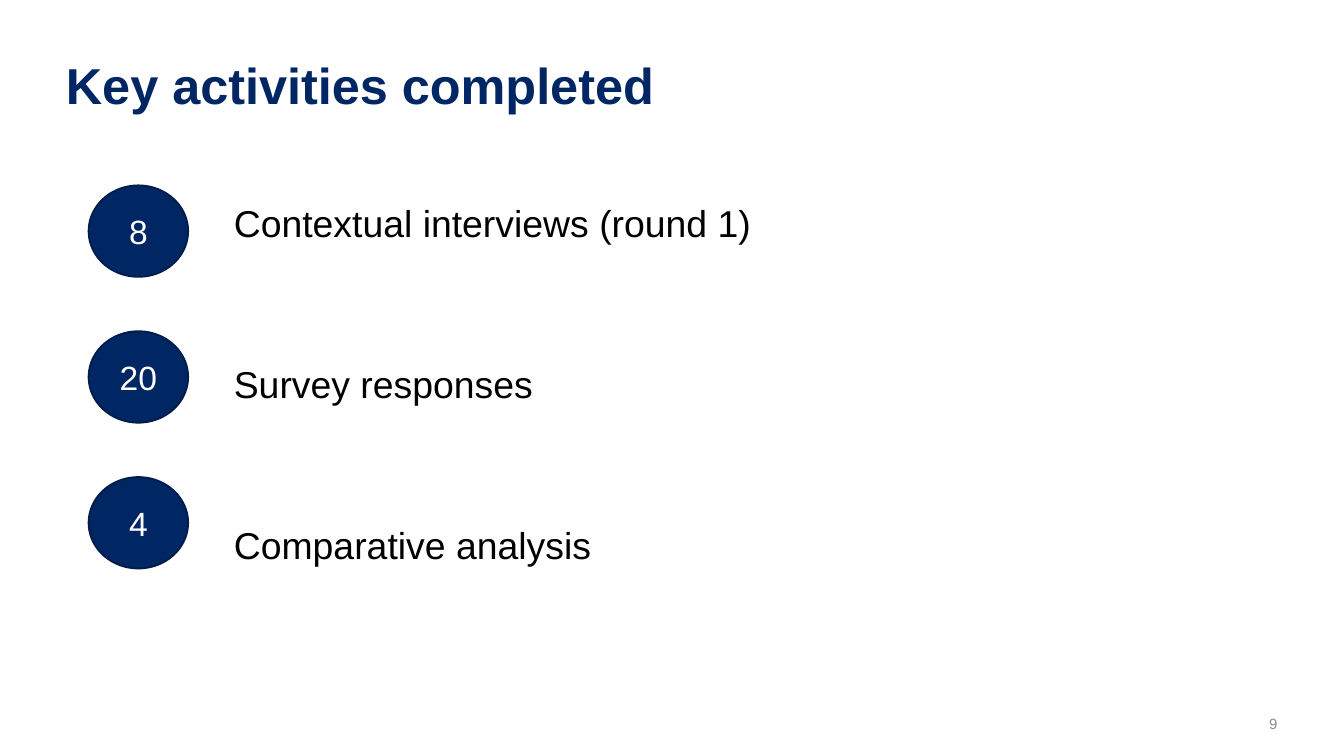
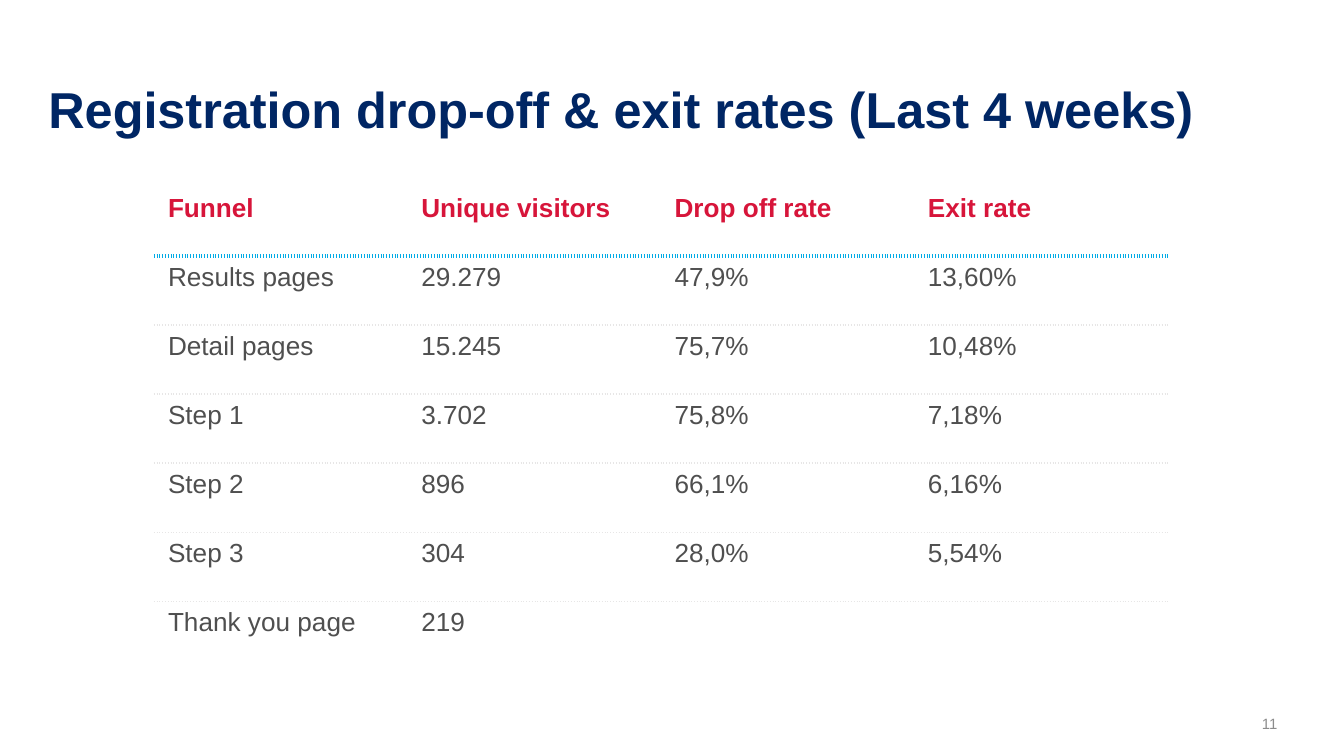
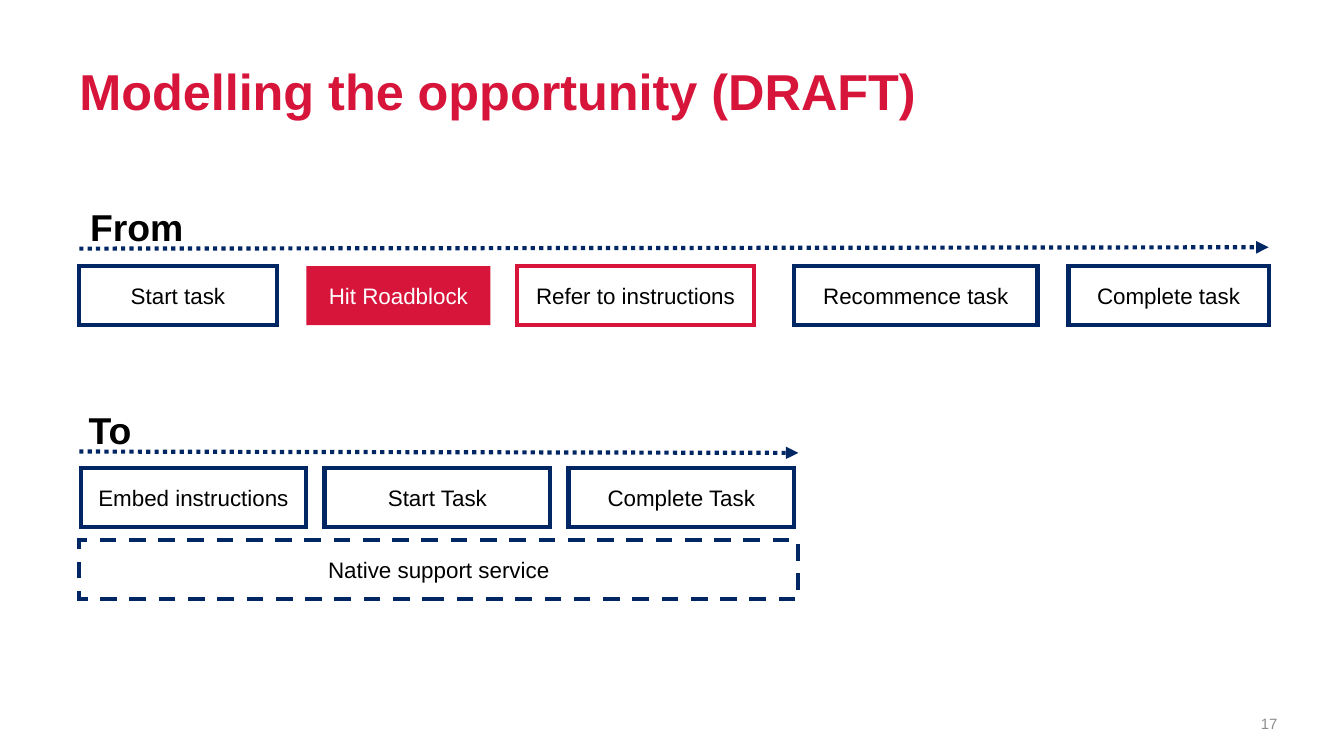
"""Build three research slides: activities, drop-off table and task model."""
from dataclasses import dataclass
from typing import Optional

from lxml import etree
from pptx import Presentation
from pptx import util as u
from pptx.dml.color import RGBColor
from pptx.enum import dml, shapes, text
from pptx.oxml import ns

NAVY = RGBColor(0x00, 0x26, 0x64)
DEEP_NAVY = RGBColor(0x00, 0x1C, 0x4A)
RED = RGBColor(0xD7, 0x15, 0x3A)
BLUE = RGBColor(0x00, 0xAB, 0xE6)
BLACK = RGBColor(0x00, 0x00, 0x00)
WHITE = RGBColor(0xFF, 0xFF, 0xFF)
GREY = RGBColor(0x8C, 0x8C, 0x8C)
DARK_GREY = RGBColor(0x4F, 0x4F, 0x4F)
PALE_GREY = RGBColor(0xE7, 0xE6, 0xE6)

FONT = "Arial"
WIDTH = u.Inches(10)
HEIGHT = u.Emu(WIDTH * 9 // 16)
COLUMN, ROW = WIDTH / 100, HEIGHT / 56.25
TITLE_ONLY = 5
LINE_SPACING = 1.2
DOTTED = dml.MSO_LINE.ROUND_DOT
OVAL = shapes.MSO_SHAPE.OVAL
RECTANGLE = shapes.MSO_SHAPE.RECTANGLE


@dataclass(frozen=True)
class Area:
    """A rectangle in grid columns and rows."""
    left: float
    top: float
    width: float
    height: float

    def lengths(self) -> tuple:
        """Return left, top, width and height as slide lengths."""
        return (u.Emu(round(self.left * COLUMN)), u.Emu(round(self.top * ROW)),
                u.Emu(round(self.width * COLUMN)), u.Emu(round(self.height * ROW)))


@dataclass(frozen=True)
class Style:
    """The look of a filled shape and its label."""
    fill: RGBColor = WHITE
    line: Optional[RGBColor] = NAVY
    line_width: float = 2.25
    dash: Optional[dml.MSO_LINE] = None
    color: RGBColor = BLACK
    size: float = 12


@dataclass(frozen=True)
class Step:
    """One step of a task flow, placed by its columns."""
    label: str
    left: float
    width: float
    style: Style = Style()


BADGE = Style(NAVY, DEEP_NAVY, 1, color=WHITE, size=18)
ROADBLOCK = Style(RED, None, color=WHITE)
DETOUR = Style(line=RED)
SUPPORT = Style(dash=dml.MSO_LINE.DASH)

ACTIVITIES = [("8", "Contextual interviews (round 1)"),
              ("20", "Survey responses"),
              ("4", "Comparative analysis")]

FUNNEL = [("Funnel", "Unique visitors", "Drop off rate", "Exit rate"),
          ("Results pages", "29.279", "47,9%", "13,60%"),
          ("Detail pages", "15.245", "75,7%", "10,48%"),
          ("Step 1", "3.702", "75,8%", "7,18%"),
          ("Step 2", "896", "66,1%", "6,16%"),
          ("Step 3", "304", "28,0%", "5,54%"),
          ("Thank you page", "219", "", "")]

FROM_STEPS = [Step("Start task", 5.9, 14.7),
              Step("Hit Roadblock", 22.8, 13.7, ROADBLOCK),
              Step("Refer to instructions", 38.5, 17.6, DETOUR),
              Step("Recommence task", 59.1, 18.1),
              Step("Complete task", 79.5, 14.9)]
TO_STEPS = [Step(label, 6 + 18.15 * index, 16.8) for index, label in
            enumerate(["Embed instructions", "Start Task", "Complete Task"])]


def set_font(paragraph, size: float, color: RGBColor, bold: bool = False) -> None:
    """Set the font of a whole paragraph."""
    font = paragraph.font
    font.name, font.size, font.bold = FONT, u.Pt(size), bold
    font.color.rgb = color


def set_margins(frame, across: float, down: float) -> None:
    """Set the side and the top and bottom insets in inches."""
    frame.margin_left = frame.margin_right = u.Inches(across)
    frame.margin_top = frame.margin_bottom = u.Inches(down)


def add_page(deck, title: str, left: float, top: float, color: RGBColor, number: str):
    """Add a page with its formatted title and page number."""
    page = deck.slides.add_slide(deck.slide_layouts[TITLE_ONLY])
    heading = page.shapes.title
    heading.left, heading.top, heading.width, heading.height = Area(left, top, 90.3, 4.2).lengths()
    frame = heading.text_frame
    frame.text = title
    frame.auto_size = text.MSO_AUTO_SIZE.NONE
    frame.vertical_anchor = text.MSO_ANCHOR.TOP
    set_margins(frame, 0, 0)
    para = frame.paragraphs[0]
    para.alignment, para.line_spacing = text.PP_ALIGN.LEFT, 0.9
    set_font(para, 27, color, True)

    frame = page.shapes.add_textbox(*Area(93.5, 53.2, 1.55, 1.3).lengths()).text_frame
    frame.text = number
    frame.word_wrap = False
    frame.vertical_anchor = text.MSO_ANCHOR.BOTTOM
    set_margins(frame, 0, 0)
    frame.paragraphs[0].alignment = text.PP_ALIGN.RIGHT
    set_font(frame.paragraphs[0], 8, GREY)
    return page


def add_lines(page, area: Area, lines: list[str], gap: float = 0, bold: bool = False) -> None:
    """Add a text box with one paragraph per line, spaced by the gap."""
    frame = page.shapes.add_textbox(*area.lengths()).text_frame
    frame.word_wrap = True
    set_margins(frame, 0.07, 0.04)
    for index, line in enumerate(lines):
        para = frame.add_paragraph() if index else frame.paragraphs[0]
        para.text = line
        para.line_spacing = LINE_SPACING
        para.space_before = u.Pt(gap if index else 0)
        set_font(para, 20, BLACK, bold)


def add_label(page, kind: shapes.MSO_SHAPE, area: Area, label: str, style: Style) -> None:
    """Add a shape with a centred label."""
    box = page.shapes.add_shape(kind, *area.lengths())
    box.shadow.inherit = False
    box.fill.solid()
    box.fill.fore_color.rgb = style.fill
    if style.line is None:
        box.line.fill.background()
    else:
        box.line.color.rgb = style.line
        box.line.width = u.Pt(style.line_width)
        if style.dash is not None:
            box.line.dash_style = style.dash
        outline = box.element.spPr.find(ns.qn("a:ln"))
        etree.SubElement(outline, ns.qn("a:miter"), lim="800000")
    frame = box.text_frame
    frame.text = label
    frame.word_wrap = True
    frame.vertical_anchor = text.MSO_ANCHOR.MIDDLE
    set_margins(frame, 0.05, 0.04)
    frame.paragraphs[0].alignment = text.PP_ALIGN.CENTER
    set_font(frame.paragraphs[0], style.size, style.color)


def add_arrow(page, left: float, top: float, right: float, bottom: float) -> None:
    """Add a dotted timeline arrow between two grid points."""
    ends = (left * COLUMN, top * ROW, right * COLUMN, bottom * ROW)
    arrow = page.shapes.add_connector(shapes.MSO_CONNECTOR.STRAIGHT,
                                      *(u.Emu(round(end)) for end in ends))
    arrow.line.color.rgb = NAVY
    arrow.line.width = u.Pt(2.25)
    arrow.line.dash_style = DOTTED
    properties = arrow.element.spPr
    etree.SubElement(properties.find(ns.qn("a:ln")), ns.qn("a:tailEnd"), type="triangle")
    etree.SubElement(properties, ns.qn("a:effectLst"))


def add_border(cell, side: str, color: RGBColor, width: float) -> None:
    """Add a dotted border to one side of a cell."""
    properties = cell._tc.get_or_add_tcPr()
    line = etree.SubElement(properties, ns.qn(f"a:ln{side}"), w=str(int(u.Pt(width))))
    fill = etree.SubElement(line, ns.qn("a:solidFill"))
    etree.SubElement(fill, ns.qn("a:srgbClr"), val=str(color))
    etree.SubElement(line, ns.qn("a:prstDash"), val="sysDot")


def add_funnel(page, area: Area, rows: list[tuple]) -> None:
    """Add the funnel table with a dotted rule between rows."""
    table = page.shapes.add_table(len(rows), len(rows[0]), *area.lengths()).table
    table.first_row = table.horz_banding = False
    rules = [(BLUE, 2)] + [(PALE_GREY, 1)] * (len(rows) - 2)
    for row, values in enumerate(rows):
        for column, value in enumerate(values):
            cell = table.cell(row, column)
            cell.text = value
            if row > 0:
                add_border(cell, "T", *rules[row - 1])
            if row < len(rules):
                add_border(cell, "B", *rules[row])
            cell.fill.background()
            set_font(cell.text_frame.paragraphs[0], 14, DARK_GREY if row else RED, row == 0)


def add_flow(page, steps: list[Step], top: float) -> None:
    """Add a row of task steps."""
    for step in steps:
        add_label(page, RECTANGLE, Area(step.left, top, step.width, 4.4), step.label, step.style)


def main() -> None:
    """Build and save the deck."""
    deck = Presentation()
    deck.slide_width, deck.slide_height = WIDTH, HEIGHT

    page = add_page(deck, "Key activities completed", 4.9, 4.5, NAVY, "9")
    add_lines(page, Area(16.7, 13.8, 46.6, 28.7), [name for _, name in ACTIVITIES], gap=57.5)
    for index, (count, _) in enumerate(ACTIVITIES):
        add_label(page, OVAL, Area(6.6, 13.8 + 10.85 * index, 7.4, 6.8), count, BADGE)

    page = add_page(deck, "Registration drop-off & exit rates (Last 4 weeks)", 3.6, 6.3, NAVY, "11")
    add_funnel(page, Area(11.5, 13.9, 75.4, 36), FUNNEL)

    page = add_page(deck, "Modelling the opportunity (DRAFT)", 5.9, 5, RED, "17")
    add_lines(page, Area(6, 14.1, 88, 4.4), ["From"], bold=True)
    add_lines(page, Area(5.9, 29.2, 88, 4.4), ["To"], bold=True)
    add_flow(page, FROM_STEPS, 19.8)
    add_flow(page, TO_STEPS, 34.8)
    add_flow(page, [Step("Native support service", 5.9, 53.5, SUPPORT)], 40.2)
    add_arrow(page, 5.9, 33.6, 59.4, 33.7)
    add_arrow(page, 5.9, 18.5, 94.4, 18.4)

    deck.save("out.pptx")


if __name__ == "__main__":
    main()
